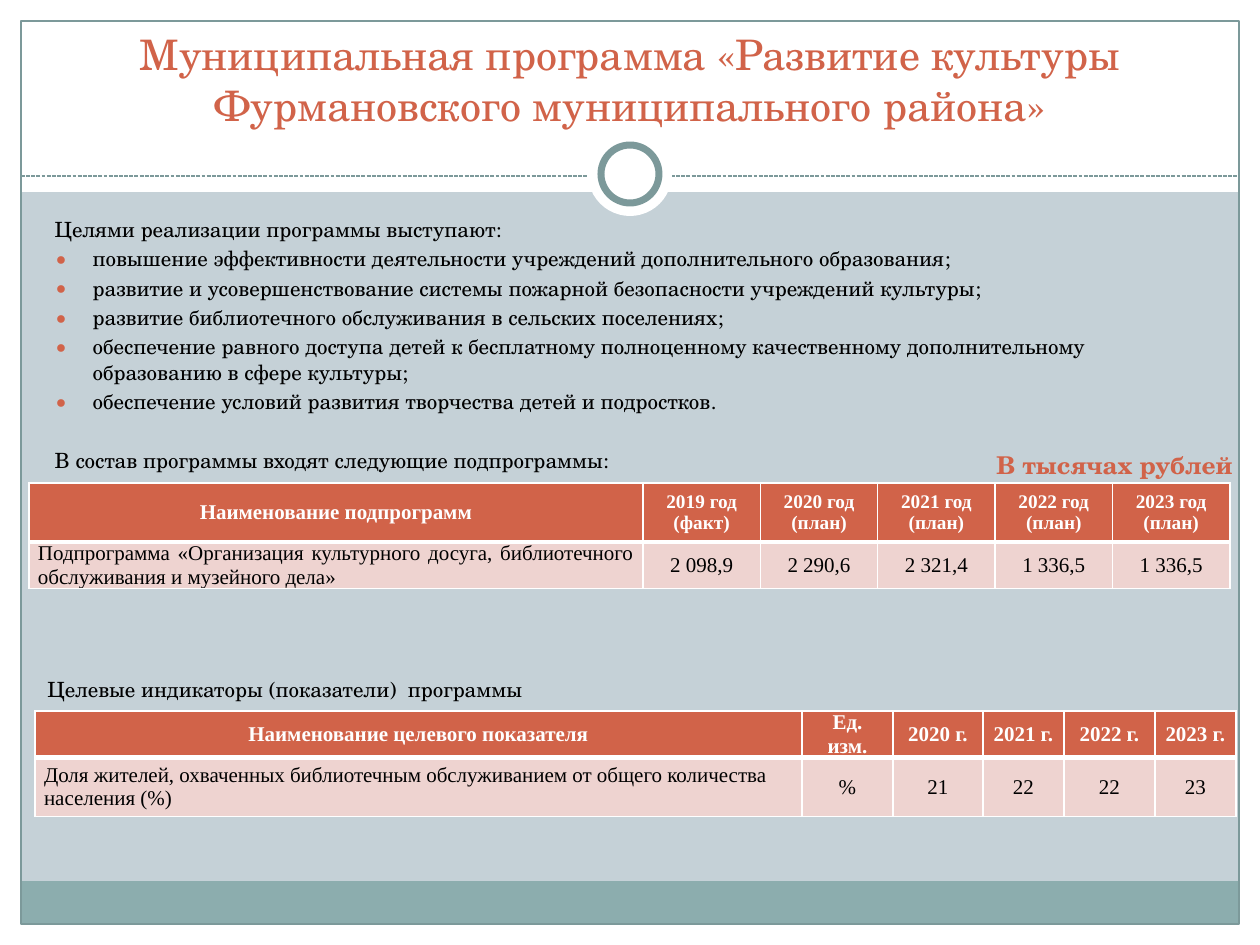
from lxml.etree import SubElement
from pptx import Presentation
from pptx.dml.color import RGBColor
from pptx.enum.dml import MSO_LINE
from pptx.enum.shapes import MSO_CONNECTOR, MSO_SHAPE
from pptx.enum.text import MSO_ANCHOR, MSO_AUTO_SIZE, PP_ALIGN
from pptx.oxml import parse_xml
from pptx.oxml.ns import nsdecls, qn
from pptx.util import Pt

# Content
TITLE = "Муниципальная программа «Развитие культуры Фурмановского муниципального района»"
GOALS_INTRO = "Целями реализации программы выступают:"
GOALS = [
    "повышение эффективности деятельности учреждений дополнительного образования;",
    "развитие и усовершенствование системы пожарной безопасности учреждений культуры;",
    "развитие библиотечного обслуживания в сельских поселениях;",
    "обеспечение равного доступа детей к бесплатному полноценному качественному "
    "дополнительному образованию в сфере культуры;",
    "обеспечение условий развития творчества детей и подростков.",
]
SUBPROGRAMS_INTRO = "В состав программы входят следующие подпрограммы:"
UNITS = "В тысячах рублей"
INDICATORS_INTRO = "Целевые индикаторы (показатели)  программы"
SUBPROGRAMS = [
    ["Наименование подпрограмм", "2019 год\n(факт)", "2020 год\n(план)",
     "2021 год\n(план)", "2022 год\n(план)", "2023 год\n(план)"],
    ["Подпрограмма «Организация культурного досуга, библиотечного обслуживания "
     "и музейного дела»", "2 098,9", "2 290,6", "2 321,4", "1 336,5", "1 336,5"],
]
INDICATORS = [
    ["Наименование целевого показателя", "Ед. изм.", "2020 г.", "2021 г.",
     "2022 г.", "2023 г."],
    ["Доля жителей, охваченных библиотечным обслуживанием от общего количества "
     "населения (%)", "%", "21", "22", "22", "23"],
]

# Look
WHITE = RGBColor(0xFF, 0xFF, 0xFF)
BLACK = RGBColor(0, 0, 0)
RUST = RGBColor(0xD1, 0x63, 0x49)
PINK = RGBColor(0xEE, 0xD3, 0xD0)
MIST = RGBColor(0xC5, 0xD1, 0xD7)
TEAL = RGBColor(0x8C, 0xAD, 0xAE)
DARK_TEAL = RGBColor(0x7C, 0x99, 0x9A)
SERIF = "TeX Gyre Schola"
TABLE_FONT = "Times New Roman"
WIDTH, HEIGHT, EDGE = 1260, 945, 21


def px(length):
    return round(length * 914400 / 126)


def add_span(para, text, size, color, font=SERIF, bold=False):
    span = para.add_run()
    span.text = text
    span.font.size = Pt(size)
    span.font.name = font
    span.font.bold = bold
    span.font.color.rgb = color


def place(shape, *area):
    shape.left, shape.top, shape.width, shape.height = map(px, area)


def add_figure(page, kind, area, fill=None, line=None, weight=0.75):
    shape = page.shapes.add_shape(kind, *map(px, area))
    shape.shadow.inherit = False
    if fill is None:
        shape.fill.background()
    else:
        shape.fill.solid()
        shape.fill.fore_color.rgb = fill
    if line is None:
        shape.line.fill.background()
    else:
        shape.line.color.rgb = line
        shape.line.width = Pt(weight)


def add_label(page, area, text, size, color, bold=False):
    box = page.shapes.add_textbox(*map(px, area))
    box.text_frame.word_wrap = True
    add_span(box.text_frame.paragraphs[0], text, size, color, bold=bold)


def set_bullet(para, bulleted):
    props = para._p.get_or_add_pPr()
    indent = px(38)
    props.set("marL", str(indent))
    props.set("indent", str(-indent))
    if not bulleted:
        SubElement(props, qn("a:buNone"))
        return
    color = SubElement(props, qn("a:buClr"))
    SubElement(color, qn("a:srgbClr")).set("val", str(RUST))
    SubElement(props, qn("a:buSzPct")).set("val", "85000")
    SubElement(props, qn("a:buFont")).set("typeface", SERIF)
    SubElement(props, qn("a:buChar")).set("char", "●")


def set_borders(cell, bottom):
    props = cell._tc.get_or_add_tcPr()
    for place_in_order, (side, weight) in enumerate(
            [("L", 1), ("R", 1), ("T", 1), ("B", bottom)]):
        props.insert(place_in_order, parse_xml(
            f'<a:ln{side} {nsdecls("a")} w="{Pt(weight)}"><a:solidFill>'
            f'<a:srgbClr val="{WHITE}"/></a:solidFill></a:ln{side}>'))


def add_grid(page, left, top, widths, heights, rows, year_size, name_align):
    area = left, top, sum(widths), sum(heights)
    table = page.shapes.add_table(len(rows), len(widths), *map(px, area)).table
    for column, width in zip(table.columns, widths):
        column.width = px(width)
    for r, (texts, height) in enumerate(zip(rows, heights)):
        table.rows[r].height = px(height)
        header = r == 0
        for c, text in enumerate(texts):
            cell = table.cell(r, c)
            cell.margin_left = cell.margin_right = px(9)
            cell.margin_top = cell.margin_bottom = 0
            cell.vertical_anchor = MSO_ANCHOR.MIDDLE
            cell.fill.solid()
            cell.fill.fore_color.rgb = RUST if header else PINK
            set_borders(cell, 3 if header else 1)
            frame = cell.text_frame
            for i, line in enumerate(text.split("\n")):
                para = frame.add_paragraph() if i else frame.paragraphs[0]
                para.alignment = PP_ALIGN.CENTER if header or c else name_align
                add_span(para, line, year_size if header and c else 12,
                         WHITE if header else BLACK, TABLE_FONT, header)


deck = Presentation()
deck.slide_width, deck.slide_height = px(WIDTH), px(HEIGHT)
page = deck.slides.add_slide(deck.slide_layouts[1])
page.background.fill.solid()
page.background.fill.fore_color.rgb = MIST

# White margins, bottom band and frame
for area in [(0, HEIGHT - EDGE, WIDTH, EDGE), (0, 0, WIDTH, 192),
             (0, 0, EDGE, HEIGHT), (WIDTH - EDGE, 0, EDGE, HEIGHT)]:
    add_figure(page, MSO_SHAPE.RECTANGLE, area, WHITE)
inner = WIDTH - 2 * EDGE
add_figure(page, MSO_SHAPE.RECTANGLE, (EDGE, 881, inner, 43), TEAL)
add_figure(page, MSO_SHAPE.RECTANGLE, (EDGE, EDGE, inner, HEIGHT - 2 * EDGE), line=DARK_TEAL)

# Dashed divider with the ring
divider = page.shapes.add_connector(
    MSO_CONNECTOR.STRAIGHT, px(EDGE), px(176), px(WIDTH - EDGE), px(176))
divider.line.color.rgb = DARK_TEAL
divider.line.width = Pt(0.75)
divider.line.dash_style = MSO_LINE.SQUARE_DOT
SubElement(divider.element.spPr, qn("a:effectLst"))
for size, line in [(84, None), (58, DARK_TEAL)]:
    area = (WIDTH - size) / 2, 174 - size / 2, size, size
    add_figure(page, MSO_SHAPE.OVAL, area, WHITE, line, 4)

# Title and goals, brought in front of the frame
title, body = page.placeholders
for holder in (title, body):
    holder.element.getparent().append(holder.element)
    holder.text_frame.word_wrap = True
    holder.text_frame.auto_size = MSO_AUTO_SIZE.NONE
place(title, 42, 31, 1176, 105)
title.text_frame.vertical_anchor = MSO_ANCHOR.BOTTOM
heading = title.text_frame.paragraphs[0]
heading.alignment = PP_ALIGN.CENTER
add_span(heading, TITLE, 24, RUST)

place(body, 42, 210, 1172, 630)
for i, text in enumerate([GOALS_INTRO, *GOALS, SUBPROGRAMS_INTRO]):
    para = body.text_frame.add_paragraph() if i else body.text_frame.paragraphs[0]
    para.space_before = Pt(19.2 if text == SUBPROGRAMS_INTRO else 2.4)
    set_bullet(para, text in GOALS)
    add_span(para, text, 12, BLACK)

# Tables and their labels
add_grid(page, 29, 483, [614] + [117.4] * 5, [59, 46], SUBPROGRAMS, 11, PP_ALIGN.JUSTIFY)
add_grid(page, 35, 711, [767, 91, 90, 81, 91, 81], [46, 59], INDICATORS, 12, PP_ALIGN.LEFT)
add_label(page, (35, 670, 857, 63), INDICATORS_INTRO, 12, BLACK)
add_label(page, (984, 444, 286, 59), UNITS, 14, RUST, bold=True)

deck.save("out.pptx")
